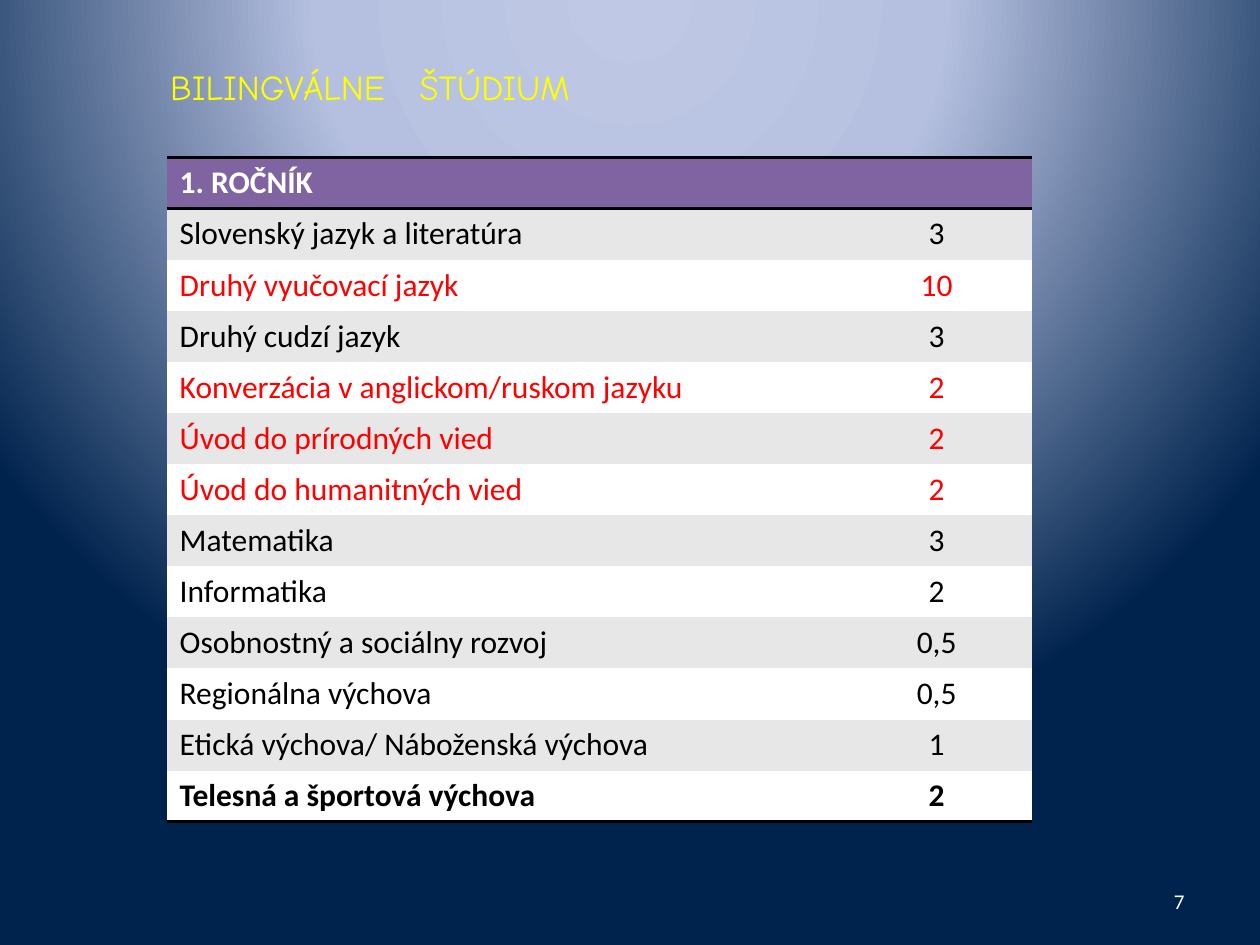
from lxml import etree
from pptx import Presentation
from pptx.dml.color import RGBColor
from pptx.enum.text import MSO_ANCHOR, PP_ALIGN
from pptx.oxml import parse_xml
from pptx.oxml.ns import nsdecls, qn
from pptx.util import Pt

LEFT, CENTER, RIGHT = PP_ALIGN.LEFT, PP_ALIGN.CENTER, PP_ALIGN.RIGHT
TOP, MIDDLE = MSO_ANCHOR.TOP, MSO_ANCHOR.MIDDLE

WHITE = RGBColor(0xFF, 0xFF, 0xFF)
BLACK = RGBColor(0x00, 0x00, 0x00)
RED = RGBColor(0xFF, 0x00, 0x00)
YELLOW = RGBColor(0xFF, 0xFF, 0x00)
PURPLE = RGBColor(0x80, 0x64, 0xA2)
GREY = RGBColor(0xE7, 0xE7, 0xE7)
PALE_BLUE = RGBColor(0xBF, 0xC9, 0xE5)
MID_BLUE = RGBColor(0xB5, 0xC0, 0xE0)
NAVY = RGBColor(0x00, 0x23, 0x4D)

BODY_FONT = "Calibri"
TITLE_FONT = "Comic Neue"
NO_STYLE = "{2D5ABB26-0587-4C30-8999-92F81FD0307C}"

HEADING = "1. ROČNÍK"
SUBJECTS = [
    ("Slovenský jazyk a literatúra", "3"),
    ("Druhý vyučovací jazyk", "10"),
    ("Druhý cudzí jazyk", "3"),
    ("Konverzácia v anglickom/ruskom jazyku", "2"),
    ("Úvod do prírodných vied", "2"),
    ("Úvod do humanitných vied", "2"),
    ("Matematika", "3"),
    ("Informatika", "2"),
    ("Osobnostný a sociálny rozvoj", "0,5"),
    ("Regionálna výchova", "0,5"),
    ("Etická výchova/ Náboženská výchova", "1"),
    ("Telesná a športová výchova", "2"),
]
BILINGUAL_ROWS = {2, 4, 5, 6}
COLUMN_WIDTHS = (385.5, 108.5)
ROW_HEIGHT = 29.2


def set_background(slide):
    stops = "".join(
        f'<a:gs pos="{percent * 1000}"><a:srgbClr val="{color}"/></a:gs>'
        for percent, color in ((0, PALE_BLUE), (40, MID_BLUE), (100, NAVY))
    )
    background = parse_xml(
        f'<p:bg {nsdecls("p", "a")}><p:bgPr><a:gradFill rotWithShape="1">'
        f'<a:gsLst>{stops}</a:gsLst><a:path path="circle">'
        '<a:fillToRect l="50000" t="-80000" r="50000" b="180000"/></a:path>'
        "</a:gradFill><a:effectLst/></p:bgPr></p:bg>"
    )
    slide.element.cSld.insert(0, background)


def write(frame, text, font, size, color, align=LEFT, bold=False):
    para = frame.paragraphs[0]
    para.text = text
    para.alignment = align
    para.font.name = font
    para.font.size = Pt(size)
    para.font.color.rgb = color
    para.font.bold = bold


def add_title(slide):
    title = slide.shapes.title
    title.left, title.top = Pt(90), Pt(34)
    title.width, title.height = Pt(630), Pt(96)
    frame = title.text_frame
    frame.vertical_anchor = TOP
    properties = frame.paragraphs[0]._p.get_or_add_pPr()
    tabs = etree.SubElement(properties, qn("a:tabLst"))
    etree.SubElement(tabs, qn("a:tab"), pos=str(Pt(142.5)), algn="l")
    write(frame, "BILINGVÁLNE\tŠTÚDIUM", TITLE_FONT, 20, YELLOW)


def add_page_number(slide):
    box = slide.shapes.add_textbox(Pt(516), Pt(500.5), Pt(168), Pt(29))
    frame = box.text_frame
    frame.word_wrap = True
    frame.vertical_anchor = MIDDLE
    write(frame, "7", BODY_FONT, 12, WHITE, RIGHT)


def add_border(cell, side):
    line = parse_xml(
        f'<a:{side} {nsdecls("a")} w="{Pt(2)}"><a:solidFill>'
        f'<a:srgbClr val="{BLACK}"/></a:solidFill></a:{side}>'
    )
    cell._tc.get_or_add_tcPr().insert(0, line)


def fill_row(table, index, texts, fill, color, bold):
    for cell, text, align in zip(table.rows[index].cells, texts, (LEFT, CENTER)):
        cell.fill.solid()
        cell.fill.fore_color.rgb = fill
        write(cell.text_frame, text, BODY_FONT, 18, color, align, bold)
        if index in (0, len(SUBJECTS)):
            add_border(cell, "lnB")
        if index == 0:
            add_border(cell, "lnT")


def add_subject_table(slide):
    row_count = len(SUBJECTS) + 1
    table = slide.shapes.add_table(
        row_count, 2, Pt(95.5), Pt(90), Pt(sum(COLUMN_WIDTHS)), Pt(ROW_HEIGHT * row_count)
    ).table
    table._tbl.tblPr.find(qn("a:tableStyleId")).text = NO_STYLE
    table.horz_banding = False
    for column, width in zip(table.columns, COLUMN_WIDTHS):
        column.width = Pt(width)
    for row in table.rows:
        row.height = Pt(ROW_HEIGHT)

    fill_row(table, 0, (HEADING, ""), PURPLE, WHITE, True)
    for index, texts in enumerate(SUBJECTS, start=1):
        fill = GREY if index % 2 else WHITE
        color = RED if index in BILINGUAL_ROWS else BLACK
        fill_row(table, index, texts, fill, color, index == len(SUBJECTS))


def main():
    deck = Presentation()
    deck.slide_width, deck.slide_height = Pt(720), Pt(540)
    slide = deck.slides.add_slide(deck.slide_layouts[5])
    set_background(slide)
    add_page_number(slide)
    add_title(slide)
    add_subject_table(slide)
    deck.save("out.pptx")


if __name__ == "__main__":
    main()
